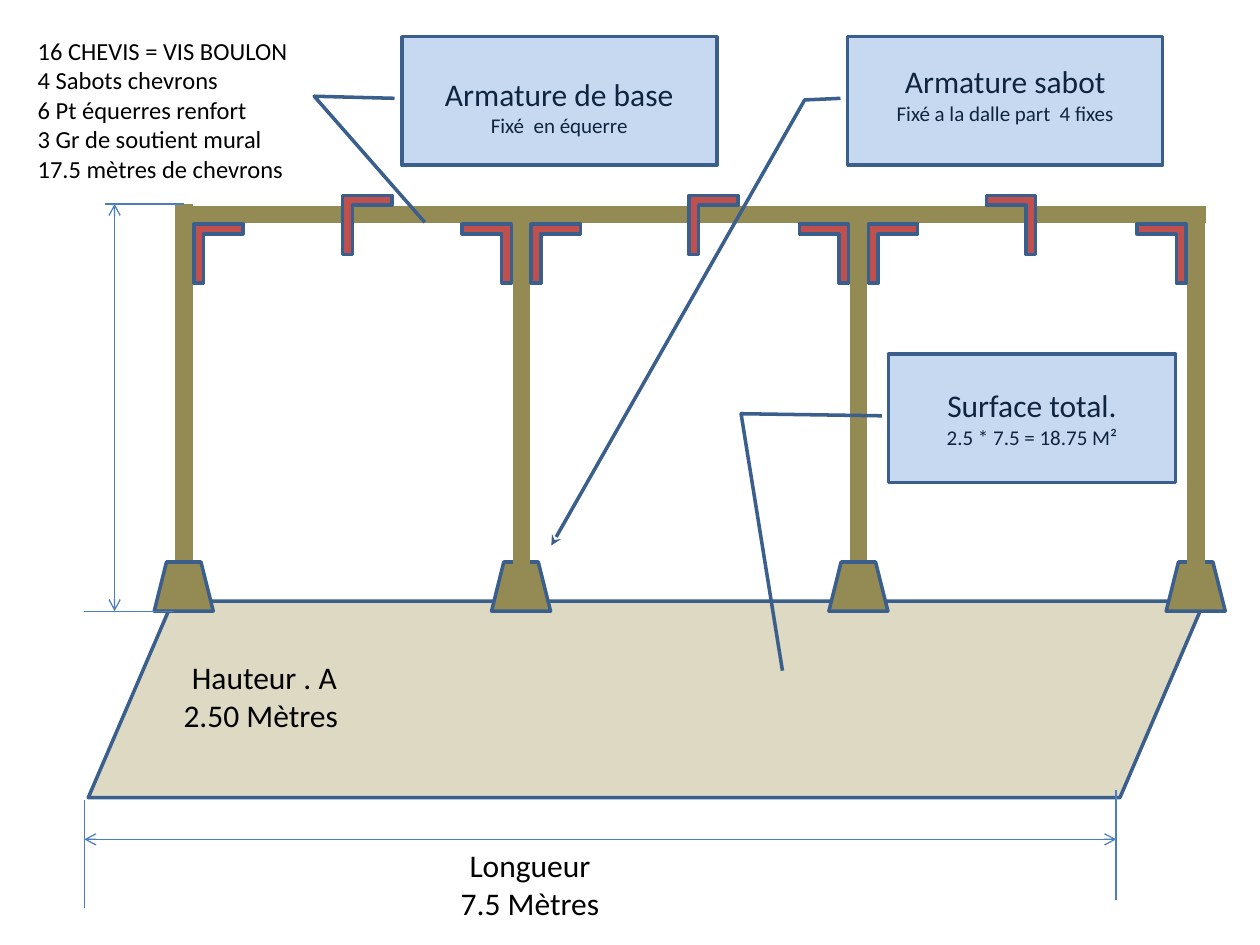
from pptx import Presentation
from pptx import util as u
from pptx.dml.color import RGBColor
from pptx.enum import shapes, text
from pptx.oxml.ns import qn
from lxml import etree

WHITE = RGBColor(0xFF, 0xFF, 0xFF)
BLACK = RGBColor(0, 0, 0)
NAVY = RGBColor(0x0F, 0x24, 0x3E)
OUTLINE = RGBColor(0x3A, 0x5F, 0x8C)
DIMENSION = RGBColor(0x4B, 0x7E, 0xBC)
WOOD = RGBColor(0x94, 0x8A, 0x54)
SLAB = RGBColor(0xDD, 0xD9, 0xC3)
STEEL = RGBColor(0xC0, 0x50, 0x4D)
PALE_BLUE = RGBColor(0xC6, 0xD9, 0xF1)
SHAPE = shapes.MSO_SHAPE
LEFT, CENTER = text.PP_ALIGN.LEFT, text.PP_ALIGN.CENTER


def set_arrowheads(shape, **ends):
    line = shape.line._get_or_add_ln()
    for end in ("headEnd", "tailEnd"):
        if end in ends:
            etree.SubElement(line, qn(f"a:{end}"), type=ends[end])


def add_line(slide, start, end, color, width, **arrowheads):
    points = [u.Cm(value) for value in (*start, *end)]
    line = slide.shapes.add_connector(shapes.MSO_CONNECTOR.STRAIGHT, *points)
    line.line.color.rgb = color
    line.line.width = u.Pt(width)
    set_arrowheads(line, **arrowheads)
    etree.SubElement(line._element.spPr, qn("a:effectLst"))


def add_outlined(slide, kind, box, fill, adjustments=()):
    shape = slide.shapes.add_shape(kind, *map(u.Cm, box))
    shape.shadow.inherit = False
    shape.fill.solid()
    shape.fill.fore_color.rgb = fill
    shape.line.color.rgb = OUTLINE
    shape.line.width = u.Pt(2)
    for index, value in enumerate(adjustments):
        shape.adjustments[index] = value
    return shape


def write_lines(shape, lines, color, align, **frame_format):
    """Write (wording, size) pairs, one paragraph each."""
    frame = shape.text_frame
    for name, value in frame_format.items():
        setattr(frame, name, value)
    for index, (wording, size) in enumerate(lines):
        paragraph = frame.add_paragraph() if index else frame.paragraphs[0]
        paragraph.alignment = align
        run = paragraph.add_run()
        run.text = wording
        run.font.color.rgb = color
        for name, value in {"name": "Calibri", "size": u.Pt(size)}.items():
            setattr(run.font, name, value)


def add_label(slide, box, lines, size, align, wrap, anchor):
    label = slide.shapes.add_textbox(*map(u.Cm, box))
    write_lines(label, [(line, size) for line in lines], BLACK, align,
                word_wrap=wrap, vertical_anchor=anchor)


def add_callout(slide, box, title, detail, leader, text_top):
    callout = add_outlined(slide, SHAPE.LINE_CALLOUT_2, box, PALE_BLUE, (0.48, -0.023, *leader))
    write_lines(callout, [(title, 18), (detail, 12)], NAVY, CENTER, word_wrap=True,
                vertical_anchor=text.MSO_ANCHOR.TOP, margin_top=u.Cm(text_top))
    return callout


def add_bracket(slide, left, top, faces_left):
    """Add an L-shaped bracket; its preset, "corner", has no MSO_SHAPE member."""
    bracket = add_outlined(slide, SHAPE.RECTANGLE, (left, top, 0.99, 1.19), STEEL)
    properties = bracket._element.spPr
    geometry = properties.find(qn("a:prstGeom"))
    geometry.set("prst", "corner")
    guides = geometry.find(qn("a:avLst"))
    for name in ("adj1", "adj2"):
        etree.SubElement(guides, qn("a:gd"), name=name, fmla="val 19700")
    properties.xfrm.set("flipV", "1")
    if faces_left:
        properties.xfrm.set("flipH", "1")


def post_positions(left, pitch=6.8, count=4):
    return [left + pitch * index for index in range(count)]


def draw_frame(slide, left, top):
    """Posts, feet and beam; left is the first post's axis, top the beam's axis."""
    posts = post_positions(left)

    def add_post(x, y, height):
        add_line(slide, (x, y + height), (x, y), WOOD, 10)

    add_post(posts[0], top - 0.21, 7.55)
    add_post(posts[2], top, 7.16)
    for x in posts:
        add_outlined(slide, SHAPE.TRAPEZOID, (x - 0.6, top + 7.01, 1.19, 0.99), WOOD)
    add_post(posts[1], top, 7.16)
    add_post(posts[3], top, 7.34)
    add_line(slide, (left, top), (posts[-1] + 0.2, top), WOOD, 10)


def draw_brackets(slide, left, top):
    """Corner brackets beside the posts and wall brackets across the beam."""
    posts = post_positions(left)
    for x in posts[:-1]:
        add_bracket(slide, x + 0.2, top + 0.2, False)
    for x in posts[1:]:
        add_bracket(slide, x - 1.19, top + 0.2, True)
    for offset, faces_left in ((3.2, False), (10.18, False), (16.18, True)):
        add_bracket(slide, left + offset, top - 0.38, faces_left)


def draw_height(slide, left, top, height):
    bottom = top + height
    add_line(slide, (left + 2.01, top), (left + 0.41, top), DIMENSION, 0.75)
    add_line(slide, (left + 1.81, bottom), (left, bottom), DIMENSION, 0.75)
    add_line(slide, (left + 0.61, top), (left + 0.61, bottom), DIMENSION, 0.75,
             headEnd="arrow", tailEnd="arrow")
    add_label(slide, (left + 1.6, bottom + 0.81, 4.06, 1.8), ["Hauteur . A", "2.50 Mètres "],
              18, CENTER, False, text.MSO_ANCHOR.MIDDLE)


def draw_length(slide, left, top, width):
    right = left + width
    add_line(slide, (right, top), (left, top), DIMENSION, 0.75,
             headEnd="arrow", tailEnd="arrow")
    add_line(slide, (left, top + 1.39), (left, top - 0.79), DIMENSION, 0.75)
    add_line(slide, (right, top + 1.22), (right, top - 0.99), DIMENSION, 0.75)
    add_label(slide, (left + 4.4, top, 9.17, 1.8), ["Longueur", "7.5 Mètres"],
              18, CENTER, True, text.MSO_ANCHOR.MIDDLE)


def draw_parts_list(slide, box):
    parts = ["16 CHEVIS = VIS BOULON", "4 Sabots chevrons", "6 Pt équerres renfort",
             "3 Gr de soutient mural", "17.5 mètres de chevrons"]
    add_label(slide, box, parts, 14, LEFT, False, text.MSO_ANCHOR.TOP)


def main():
    presentation = Presentation()
    presentation.slide_width, presentation.slide_height = u.Cm(25.4), u.Cm(19.05)
    slide = presentation.slides.add_slide(presentation.slide_layouts[6])
    slide.background.fill.solid()
    slide.background.fill.fore_color.rgb = WHITE

    add_outlined(slide, SHAPE.PARALLELOGRAM, (1.78, 12.12, 22.5, 3.96), SLAB, (0.43,))
    draw_frame(slide, 3.71, 4.32)
    shoe = add_callout(slide, (17.09, 0.74, 6.35, 2.59), "Armature sabot",
                       "Fixé a la dalle part  4 fixes", (0.493, -0.137, 3.961, -0.941), 0.52)
    set_arrowheads(shoe, tailEnd="stealth")
    draw_parts_list(slide, (0.51, 0.6, 6.68, 4.3))
    draw_brackets(slide, 3.71, 4.32)
    draw_height(slide, 1.7, 4.11, 8.21)
    draw_length(slide, 1.7, 16.92, 20.8)
    add_callout(slide, (17.91, 7.14, 5.79, 2.59), "Surface total.",
                "2.5 * 7.5 = 18.75 M²", (0.464, -0.513, 2.464, -0.369), 0.65)
    add_callout(slide, (8.1, 0.74, 6.35, 2.59), "Armature de base",
                "Fixé  en équerre", (0.464, -0.278, 1.445, 0.073), 0.77)
    presentation.save("out.pptx")


if __name__ == "__main__":
    main()
